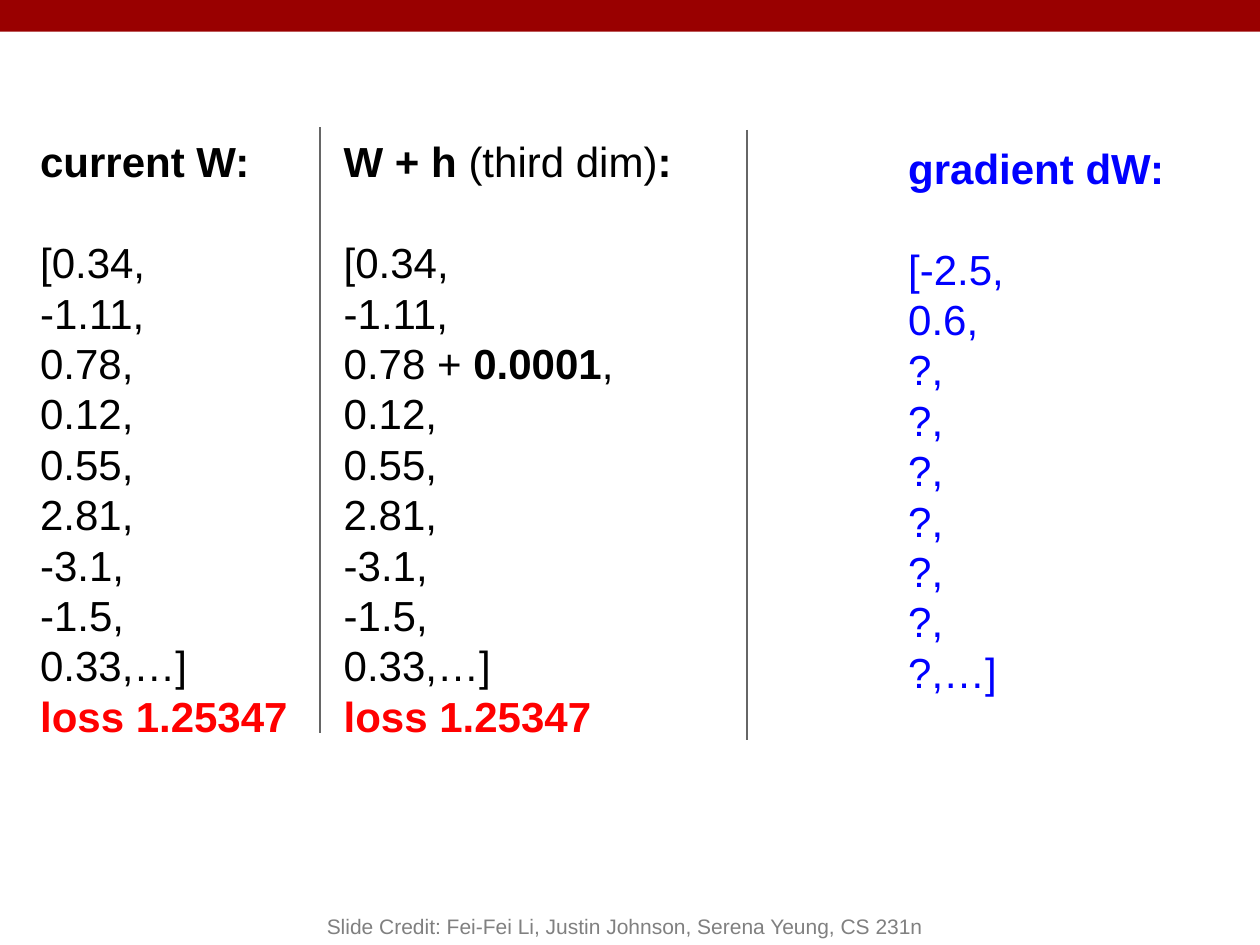
"""Build the slide on estimating a gradient numerically, one dimension at a time."""
from lxml import etree
from pptx import Presentation
from pptx.dml.color import RGBColor
from pptx.enum.shapes import MSO_CONNECTOR, MSO_SHAPE
from pptx.enum.text import MSO_ANCHOR, PP_ALIGN
from pptx.oxml.ns import qn
from pptx.util import Cm, Pt

STRAIGHT = MSO_CONNECTOR.STRAIGHT
RECTANGLE = MSO_SHAPE.RECTANGLE
BOTTOM = MSO_ANCHOR.BOTTOM
CENTER = PP_ALIGN.CENTER

COLORS = {
    "banner": "990000",
    "weights": "000000",
    "gradient": "0000FF",
    "loss": "FF0000",
    "divider": "666666",
    "credit": "808080",
}
FONT = "Arial"
LINE_HEIGHT = Pt(28.8)
PADDING = Cm(0.25)


def add_run(paragraph, text, size, color, bold=False):
    run = paragraph.add_run()
    run.text = text
    run.font.name = FONT
    run.font.size = Pt(size)
    run.font.bold = bold
    run.font.color.rgb = RGBColor.from_string(COLORS[color])


prs = Presentation()
prs.slide_width = Cm(25.4)
prs.slide_height = Cm(19.05)
slide = prs.slides.add_slide(prs.slide_layouts[6])

banner = slide.shapes.add_shape(RECTANGLE, 0, 0, prs.slide_width, Cm(0.64))
banner.shadow.inherit = False
banner.fill.solid()
banner.fill.fore_color.rgb = RGBColor.from_string(COLORS["banner"])
banner.line.fill.background()

weights = ["[0.34,", "-1.11,", "0.78,", "0.12,", "0.55,", "2.81,", "-3.1,", "-1.5,", "0.33,…]"]
nudged_weights = [[(weight, False)] for weight in weights]
nudged_weights[2] = [("0.78 + ", False), ("0.0001", True), (",", False)]
gradient = ["[-2.5,", "0.6,"] + ["?,"] * 6 + ["?,…]"]
loss = "loss 1.25347"

columns = [
    (0.56, 2.49, 6.55, "weights", [("current W:", True)],
     [[(weight, False)] for weight in weights], loss),
    (6.68, 2.49, 9.42, "weights", [("W + h ", True), ("(third dim)", False), (":", True)],
     nudged_weights, loss),
    (18.06, 2.62, 6.55, "gradient", [("gradient dW:", True)],
     [[(slope, False)] for slope in gradient], None),
]
for left, top, width, color, heading, entries, loss_text in columns:
    column = slide.shapes.add_textbox(Cm(left), Cm(top), Cm(width), Cm(1.09))
    frame = column.text_frame
    frame.word_wrap = True
    frame.margin_left = frame.margin_right = PADDING
    frame.margin_top = frame.margin_bottom = PADDING
    lines = [(heading, color)] + [(entry, color) for entry in entries]
    if loss_text:
        lines.append(([(loss_text, True)], "loss"))
    for index, (parts, line_color) in enumerate(lines):
        paragraph = frame.add_paragraph() if index else frame.paragraphs[0]
        paragraph.line_spacing = LINE_HEIGHT
        if index == 1:
            paragraph.space_before = LINE_HEIGHT
        for text, bold in parts:
            add_run(paragraph, text, 24, line_color, bold)

for x, top, bottom in [(6.45, 2.57, 14.78), (15.06, 2.62, 14.91)]:
    divider = slide.shapes.add_connector(STRAIGHT, Cm(x), Cm(top), Cm(x), Cm(bottom))
    divider.line.color.rgb = RGBColor.from_string(COLORS["divider"])
    divider.line.width = Pt(0.75)
    etree.SubElement(divider.element.spPr, qn("a:effectLst"))

credit = slide.shapes.add_textbox(Cm(5.08), Cm(17.78), Cm(15.04), Cm(1.27))
credit.text_frame.word_wrap = True
credit.text_frame.vertical_anchor = BOTTOM
credit_line = credit.text_frame.paragraphs[0]
credit_line.alignment = CENTER
add_run(credit_line, "Slide Credit: Fei-Fei Li, Justin Johnson, Serena Yeung, CS 231n", 12, "credit")

prs.save("out.pptx")
